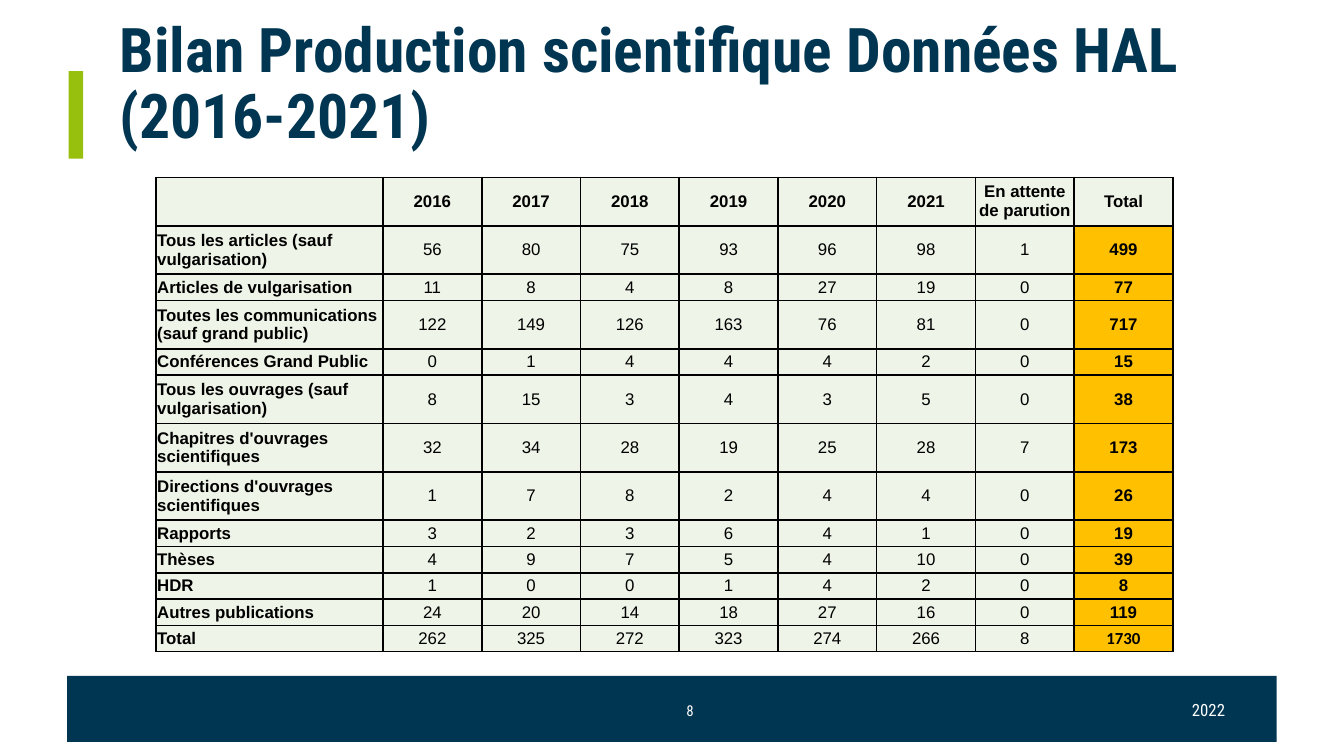
from lxml import etree
from pptx import Presentation
from pptx.dml.color import RGBColor
from pptx.enum import shapes, text
from pptx.oxml.ns import qn
from pptx.util import Inches, Pt

COLORS = {"navy": "003652", "green": "97C00E", "white": "FFFFFF",
          "black": "000000", "pale": "EEF4E7", "gold": "FFC000"}
FONT = "Roboto Condensed"
MARGINS = ("margin_left", "margin_top", "margin_right", "margin_bottom")


def write(p, words, name, size, color, bold=False, align=text.PP_ALIGN.LEFT):
    p.alignment = align
    r = p.add_run()
    r.text = words
    for key, value in {"name": name, "size": Pt(size), "bold": bold}.items():
        setattr(r.font, key, value)
    r.font.color.rgb = RGBColor.from_string(COLORS[color])


def add_borders(cell):
    tc_pr = cell._tc.get_or_add_tcPr()
    for side in ("lnL", "lnR", "lnT", "lnB"):
        ln = etree.SubElement(tc_pr, qn(f"a:{side}"), w=str(Pt(1)))
        fill = etree.SubElement(ln, qn("a:solidFill"))
        etree.SubElement(fill, qn("a:srgbClr"), val=COLORS["black"])


# 16:9 slide
prs = Presentation()
prs.slide_width = Inches(10)
prs.slide_height = prs.slide_width * 9 // 16
s = prs.slides.add_slide(prs.slide_layouts[5])

# Footer band and title accent
for color, box in (("navy", (0.5, 5.03, 9, 0.49)), ("green", (0.51, 0.53, 0.11, 0.65))):
    sp = s.shapes.add_shape(shapes.MSO_SHAPE.RECTANGLE, *map(Inches, box))
    sp.shadow.inherit = False
    sp.fill.solid()
    sp.fill.fore_color.rgb = RGBColor.from_string(COLORS[color])
    sp.line.fill.background()

# Page number and year
for words, size, box, align, anchor in (
    ("8", 8, (4.77, 5.14, 0.73, 0.3), text.PP_ALIGN.CENTER, text.MSO_ANCHOR.MIDDLE),
    ("2022", 9, (8.77, 5.16, 1.62, 0.3), text.PP_ALIGN.LEFT, text.MSO_ANCHOR.TOP),
):
    tf = s.shapes.add_textbox(*map(Inches, box)).text_frame
    tf.word_wrap = True
    tf.vertical_anchor = anchor
    write(tf.paragraphs[0], words, FONT, size, "white", align=align)

# Title
title = s.shapes.title
title.left, title.top, title.width, title.height = map(Inches, (0.79, 0.31, 9.12, 0.65))
tf = title.text_frame
tf.word_wrap = True
tf.auto_size = text.MSO_AUTO_SIZE.NONE
tf.vertical_anchor = text.MSO_ANCHOR.MIDDLE
for margin in MARGINS:
    setattr(tf, margin, Inches(0.1))
p = tf.paragraphs[0]
p.line_spacing = 0.9
write(p, "Bilan Production scientifique Données HAL (2016-2021)", FONT, 33, "navy", True)

# Publications by type and year
rows = [
    ("", 2016, 2017, 2018, 2019, 2020, 2021, "En attente de parution", "Total"),
    ("Tous les articles (sauf vulgarisation)", 56, 80, 75, 93, 96, 98, 1, 499),
    ("Articles de vulgarisation", 11, 8, 4, 8, 27, 19, 0, 77),
    ("Toutes les communications (sauf grand public)", 122, 149, 126, 163, 76, 81, 0, 717),
    ("Conférences Grand Public", 0, 1, 4, 4, 4, 2, 0, 15),
    ("Tous les ouvrages (sauf vulgarisation)", 8, 15, 3, 4, 3, 5, 0, 38),
    ("Chapitres d'ouvrages scientifiques", 32, 34, 28, 19, 25, 28, 7, 173),
    ("Directions d'ouvrages scientifiques", 1, 7, 8, 2, 4, 4, 0, 26),
    ("Rapports", 3, 2, 3, 6, 4, 1, 0, 19),
    ("Thèses", 4, 9, 7, 5, 4, 10, 0, 39),
    ("HDR", 1, 0, 0, 1, 4, 2, 0, 8),
    ("Autres publications", 24, 20, 14, 18, 27, 16, 0, 119),
    ("Total", 262, 325, 272, 323, 274, 266, 8, 1730),
]
two_line_rows = (0, 1, 3, 5, 6, 7)
width, height, label_width, tall = 7.57, 3.53, 1.69, 0.36
short = (height - tall * len(two_line_rows)) / (len(rows) - len(two_line_rows))
last_row, last_col = len(rows) - 1, len(rows[0]) - 1

table = s.shapes.add_table(len(rows), len(rows[0]), Inches(1.16), Inches(1.32),
                           Inches(width), Inches(height)).table
table.horz_banding = False
for j, column in enumerate(table.columns):
    column.width = Inches((width - label_width) / last_col if j else label_width)

for i, values in enumerate(rows):
    table.rows[i].height = Inches(tall if i in two_line_rows else short)
    for j, value in enumerate(values):
        cell = table.cell(i, j)
        cell.vertical_anchor = text.MSO_ANCHOR.MIDDLE
        for margin, inset in zip(MARGINS, (0.01, 0.02, 0.01, 0.02)):
            setattr(cell, margin, Inches(inset))
        add_borders(cell)
        cell.fill.solid()
        fill = "gold" if i and j == last_col else "pale"
        cell.fill.fore_color.rgb = RGBColor.from_string(COLORS[fill])
        if value != "":
            grand_total = (i, j) == (last_row, last_col)
            write(cell.text_frame.paragraphs[0], str(value),
                  "Calibri" if grand_total else "Arial", 9, "black",
                  bold=i == 0 or j in (0, last_col),
                  align=text.PP_ALIGN.CENTER if j else text.PP_ALIGN.LEFT)

prs.save("out.pptx")
